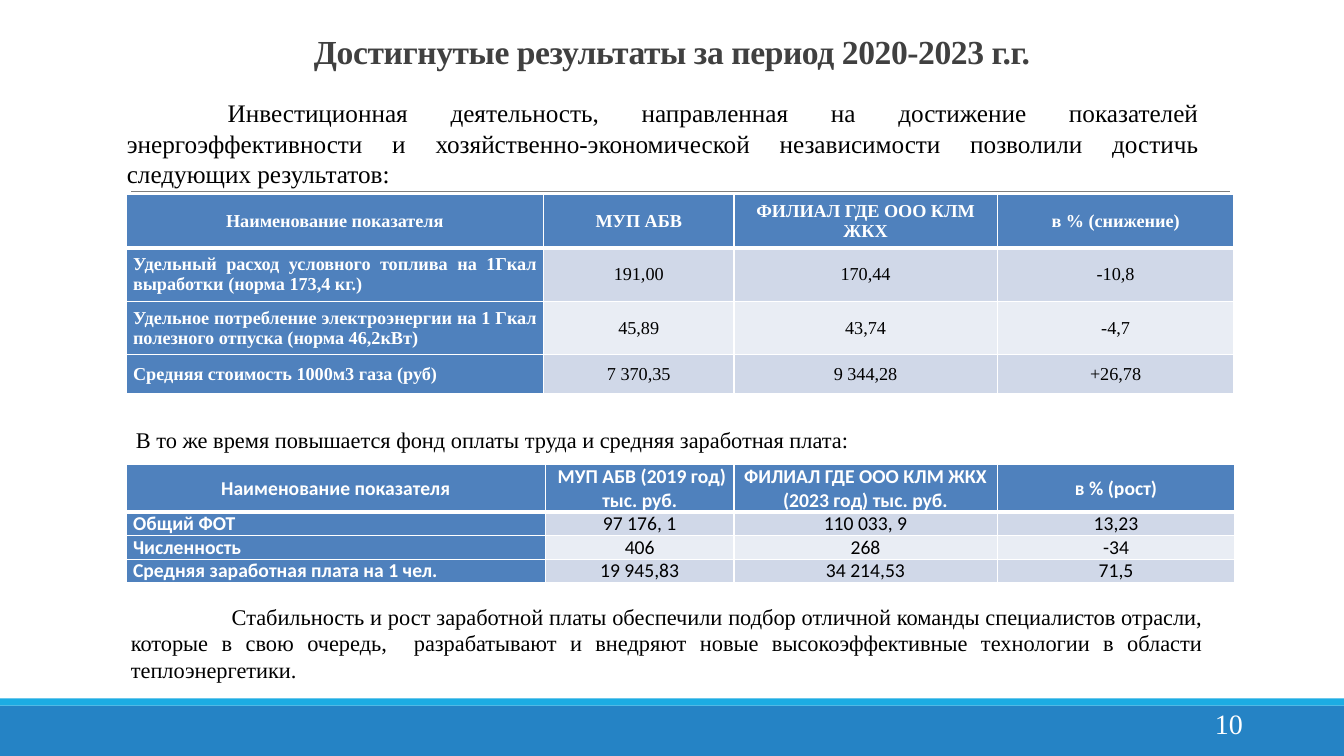
from dataclasses import dataclass

from lxml.etree import SubElement
from pptx import Presentation
from pptx.dml.color import RGBColor
from pptx.enum.shapes import MSO_CONNECTOR, MSO_SHAPE
from pptx.enum.text import MSO_ANCHOR as ANCHOR, PP_ALIGN as ALIGN
from pptx.oxml import parse_xml
from pptx.oxml.ns import nsdecls, qn
from pptx.util import Inches, Pt


@dataclass(frozen=True)
class Theme:
    serif: str = "Times New Roman"
    sans: str = "Calibri"
    white: str = "FFFFFF"
    black: str = "000000"
    title: str = "404040"
    rule: str = "7E7E7E"
    footer: str = "2583C5"
    stripe: str = "1CACE3"
    head: str = "4F81BD"
    bands: tuple = ("D0D8E8", "E9EDF4")
    title_size: float = 24
    number_size: float = 20
    lead_size: float = 18
    body_size: float = 16
    results_size: float = 13
    wages_size: float = 14


T = Theme()

RESULTS = [
    ["Наименование показателя", "МУП АБВ", "ФИЛИАЛ ГДЕ ООО КЛМ ЖКХ", "в % (снижение)"],
    ["Удельный расход условного топлива на 1Гкал выработки (норма 173,4 кг.)",
     "191,00", "170,44", "-10,8"],
    ["Удельное потребление электроэнергии на 1 Гкал полезного отпуска (норма 46,2кВт)",
     "45,89", "43,74", "-4,7"],
    ["Средняя стоимость 1000м3 газа (руб)", "7 370,35", "9 344,28", "+26,78"],
]
WAGES = [
    ["Наименование показателя", " МУП АБВ (2019 год) тыс. руб.",
     "ФИЛИАЛ ГДЕ ООО КЛМ ЖКХ (2023 год) тыс. руб.", "в % (рост)"],
    ["Общий ФОТ", "97 176, 1", "110 033, 9", "13,23"],
    ["Численность", "406", "268", "-34"],
    ["Средняя заработная плата на 1 чел.", "19 945,83", "34 214,53", "71,5"],
]


def rgb(color):
    return RGBColor.from_string(color)


def add_run(p, text, size, color, font=T.serif, bold=False):
    r = p.add_run()
    r.text = text
    r.font.size = Pt(size)
    r.font.name = font
    r.font.bold = bold
    r.font.color.rgb = rgb(color)
    return r


def add_text(slide, box, text, size, color=T.black, align=ALIGN.LEFT, bold=False,
             indent=0, insets=(0.1, 0.05, 0.1, 0.05), wrap=True):
    tf = slide.shapes.add_textbox(*map(Inches, box)).text_frame
    tf.word_wrap = wrap
    tf.margin_left, tf.margin_top, tf.margin_right, tf.margin_bottom = map(Inches, insets)
    p = tf.paragraphs[0]
    p.alignment = align
    if indent:
        p._p.get_or_add_pPr().set("indent", str(Inches(indent)))
    add_run(p, text, size, color, bold=bold)
    return p


def add_title(slide, box):
    p = add_text(slide, box, "Достигнутые результаты за период 2020-2023 г.г.",
                 T.title_size, T.title, ALIGN.CENTER, True, insets=(0, 0.1, 0, 0))
    p.line_spacing = Pt(32.6)
    p.space_before = Pt(7)
    p.runs[0].font._element.set("spc", "-30")


def add_rule(slide, left, top, width):
    line = slide.shapes.add_connector(
        MSO_CONNECTOR.STRAIGHT, Inches(left), Inches(top), Inches(left + width), Inches(top))
    line.line.color.rgb = rgb(T.rule)
    line.line.width = Pt(0.48)
    SubElement(line._element.spPr, qn("a:effectLst"))


def add_footer(slide, box, number):
    left, top, width, height = box
    stripe = 0.07
    bars = [(top + stripe, height - stripe, T.footer), (top, stripe, T.stripe)]
    for bar_top, bar_height, color in bars:
        sp = slide.shapes.add_shape(MSO_SHAPE.RECTANGLE, Inches(left), Inches(bar_top),
                                    Inches(width), Inches(bar_height))
        sp.shadow.inherit = False
        sp.fill.solid()
        sp.fill.fore_color.rgb = rgb(color)
        sp.line.fill.background()
    add_text(slide, (left + width - 1.31, top + 0.08, 0.4, 0.34), number,
             T.number_size, T.white, indent=0.03, insets=(0, 0, 0, 0))


def set_borders(cell, row):
    # A thick line separates the header from the body
    widths = {"L": 1, "R": 1, "T": 3 if row == 1 else 1, "B": 3 if row == 0 else 1}
    tc_pr = cell._tc.get_or_add_tcPr()
    for i, (side, width) in enumerate(widths.items()):
        tc_pr.insert(i, parse_xml(
            f'<a:ln{side} {nsdecls("a")} w="{Pt(width)}"><a:solidFill>'
            f'<a:srgbClr val="{T.white}"/></a:solidFill></a:ln{side}>'))


def add_table(slide, box, data, cols, rows, size, font):
    table = slide.shapes.add_table(len(rows), len(cols), *map(Inches, box)).table
    for column, width in zip(table.columns, cols):
        column.width = Inches(width)
    for i, (values, height) in enumerate(zip(data, rows)):
        table.rows[i].height = Inches(height)
        for j, value in enumerate(values):
            cell = table.cell(i, j)
            is_head = i == 0 or j == 0
            cell.fill.solid()
            cell.fill.fore_color.rgb = rgb(T.head if is_head else T.bands[(i - 1) % 2])
            set_borders(cell, i)
            cell.vertical_anchor = ANCHOR.MIDDLE
            cell.margin_left = cell.margin_right = Inches(0.07)
            cell.margin_top = cell.margin_bottom = 0
            p = cell.text_frame.paragraphs[0]
            p.alignment = ALIGN.JUSTIFY if i and j == 0 else ALIGN.CENTER
            add_run(p, value, size, T.white if is_head else T.black, font, is_head)


def build_slide(prs):
    slide = prs.slides.add_slide(prs.slide_layouts[6])

    # Frame: footer, rule and title
    add_footer(slide, (0, 6.93, 13.33, 0.57), "10")
    add_rule(slide, 1.3, 1.9, 10.9)
    add_title(slide, (1, 0.15, 11.33, 0.52))

    # Efficiency results
    add_text(slide, (1.16, 0.92, 10.83, 1.01),
             "Инвестиционная деятельность, направленная на достижение показателей "
             "энергоэффективности и хозяйственно-экономической независимости позволили "
             "достичь следующих результатов:",
             T.lead_size, align=ALIGN.JUSTIFY, indent=1)
    add_table(slide, (1.25, 1.93, 11, 1.99), RESULTS, (4.14, 1.89, 2.61, 2.35),
              (0.53, 0.53, 0.53, 0.39), T.results_size, T.serif)

    # Payroll and wages
    add_text(slide, (1.25, 4.18, 7.37, 0.37),
             "В то же время повышается фонд оплаты труда и средняя заработная плата:",
             T.body_size, wrap=False)
    add_table(slide, (1.25, 4.61, 11, 1.17), WAGES, (4.16, 1.87, 2.61, 2.36),
              (0.47, 0.23, 0.23, 0.23), T.wages_size, T.sans)

    # Conclusion
    add_text(slide, (1.2, 5.93, 10.83, 0.91),
             "Стабильность и рост заработной платы обеспечили подбор отличной команды "
             "специалистов отрасли, которые в свою очередь,  разрабатывают и внедряют новые "
             "высокоэффективные технологии в области теплоэнергетики.",
             T.body_size, align=ALIGN.JUSTIFY, indent=1)


def main():
    prs = Presentation()
    prs.slide_width, prs.slide_height = Inches(13.33), Inches(7.5)
    build_slide(prs)
    prs.save("out.pptx")


if __name__ == "__main__":
    main()
